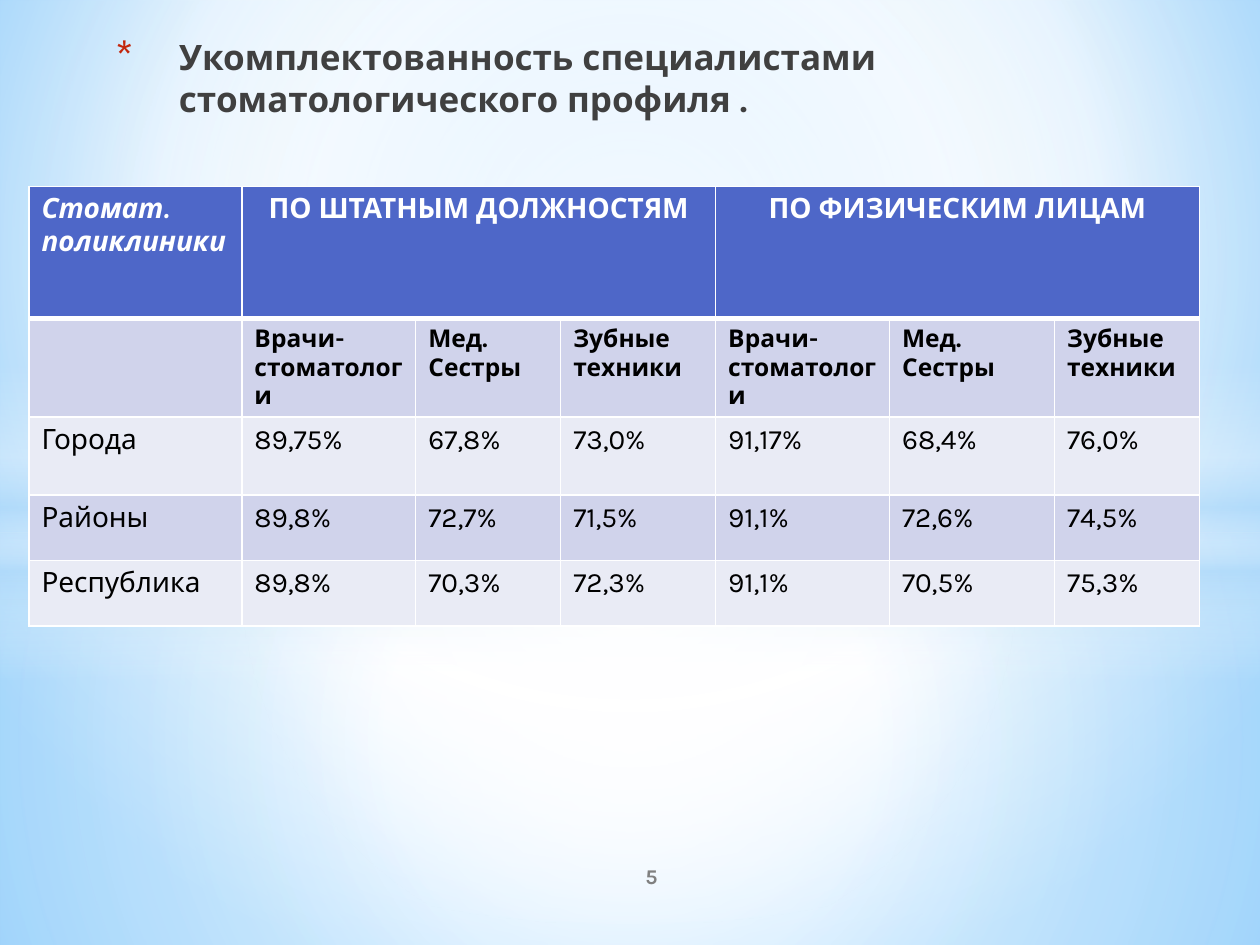
from lxml import etree
from pptx import Presentation
from pptx.dml.color import RGBColor
from pptx.enum import shapes, text
from pptx.oxml import ns
from pptx.util import Inches, Pt

FONT = "Karla"
WHITE = RGBColor(0xFF, 0xFF, 0xFF)
BLACK = RGBColor(0, 0, 0)
PALE_BLUE = RGBColor(0xB4, 0xDC, 0xFA)
SKY_BLUE = RGBColor(0x9E, 0xD5, 0xFF)
DEEP_BLUE = RGBColor(0x5B, 0xB9, 0xFF)
HEADER_BLUE = RGBColor(0x4E, 0x67, 0xC8)
BAND_DARK = RGBColor(0xD0, 0xD3, 0xEB)
BAND_LIGHT = RGBColor(0xE9, 0xEB, 0xF5)
TITLE_GRAY = RGBColor(0x40, 0x40, 0x40)
NUMBER_GRAY = RGBColor(0x80, 0x80, 0x80)
BULLET_RED = RGBColor(0xC3, 0x26, 0x0C)

CENTER = (50, 50, 50, 50)
# Left, top, width, height; preset; stops (position, colour, opacity); focus
GLOWS = [
    ((0, 4.23, 10, 3.27), "RECTANGLE",
     [(0, WHITE, 91), (37, WHITE, 76), (100, PALE_BLUE, 79)], CENTER),
    ((0, 0, 10, 4.23), "RECTANGLE",
     [(0, WHITE, 89), (48, WHITE, 62), (100, PALE_BLUE, 79)], CENTER),
    ((0, 2.9, 10, 2.5), "RECTANGLE",
     [(0, WHITE, 0), (29, WHITE, 30), (45, PALE_BLUE, 40),
      (55, WHITE, 26), (65, PALE_BLUE, 60), (100, WHITE, 0)], None),
    ((0, 1.75, 10, 5.58), "OVAL", [(0, WHITE, 100), (54, WHITE, 0)], CENTER),
]

COLUMN_WIDTHS = [1.69, 1.38, 1.15, 1.23, 1.38, 1.31, 1.15]
ROW_HEIGHTS = [1.05, 0.65, 0.62, 0.52, 0.52]
STAFF = ["Врачи-стоматологи", "Мед. Сестры", "Зубные техники"]
ROWS = [
    ["Стомат. поликлиники", "ПО ШТАТНЫМ ДОЛЖНОСТЯМ", "", "",
     "ПО ФИЗИЧЕСКИМ ЛИЦАМ", "", ""],
    [""] + STAFF * 2,
    ["Города", "89,75%", "67,8%", "73,0%", "91,17%", "68,4%", "76,0%"],
    ["Районы", "89,8%", "72,7%", "71,5%", "91,1%", "72,6%", "74,5%"],
    ["Республика", "89,8%", "70,3%", "72,3%", "91,1%", "70,5%", "75,3%"],
]


def add_element(parent, tag, **attributes):
    values = {name: str(value) for name, value in attributes.items()}
    return etree.SubElement(parent, ns.qn(tag), values)


def set_gradient(properties, stops, focus):
    """Swap the solid fill for a radial gradient, or a vertical one without focus."""
    solid = properties.find(ns.qn("a:solidFill"))
    gradient = etree.Element(ns.qn("a:gradFill"), rotWithShape="1")
    stop_list = add_element(gradient, "a:gsLst")
    for position, color, opacity in stops:
        stop = add_element(stop_list, "a:gs", pos=position * 1000)
        shade = add_element(stop, "a:srgbClr", val=color)
        if opacity < 100:
            add_element(shade, "a:alpha", val=opacity * 1000)
    if focus:
        circle = add_element(gradient, "a:path", path="circle")
        sides = {side: edge * 1000 for side, edge in zip("ltrb", focus)}
        add_element(circle, "a:fillToRect", **sides)
    else:
        add_element(gradient, "a:lin", ang=90 * 60000, scaled=0)
    properties.replace(solid, gradient)


def format_text(paragraph, size, color, bold=False, italic=False):
    for run in paragraph.runs:
        font = run.font
        font.name, font.size = FONT, Pt(size)
        font.bold, font.italic = bold, italic
        font.color.rgb = color


def add_background(slide):
    slide.background.fill.solid()
    properties = slide.element.find(".//" + ns.qn("p:bgPr"))
    stops = [(0, SKY_BLUE, 100), (60, WHITE, 100), (100, DEEP_BLUE, 100)]
    set_gradient(properties, stops, (20, 10, 20, 60))


def add_glow(slide, box, preset, stops, focus):
    shape = slide.shapes.add_shape(
        getattr(shapes.MSO_SHAPE, preset), *map(Inches, box))
    shape.shadow.inherit = False
    shape.line.fill.background()
    shape.fill.solid()
    set_gradient(shape.element.spPr, stops, focus)


def add_title(slide):
    title = slide.shapes.title
    title.left, title.top = Inches(0.62), Inches(0.23)
    title.width, title.height = Inches(8.5), Inches(0.94)
    frame = title.text_frame
    frame.text = "Укомплектованность специалистами стоматологического профиля ."
    frame.word_wrap = True
    frame.auto_size = text.MSO_AUTO_SIZE.NONE
    frame.vertical_anchor = text.MSO_ANCHOR.TOP
    paragraph = frame.paragraphs[0]
    paragraph.alignment = text.PP_ALIGN.LEFT
    format_text(paragraph, 20, TITLE_GRAY, bold=True)
    # Hanging asterisk bullet
    properties = paragraph._p.get_or_add_pPr()
    properties.set("marL", str(Inches(0.7)))
    properties.set("indent", str(Inches(-0.5)))
    add_element(add_element(properties, "a:buClr"), "a:srgbClr", val=BULLET_RED)
    add_element(properties, "a:buSzPct", val=128000)
    add_element(properties, "a:buFont", typeface=FONT)
    add_element(properties, "a:buChar", char="*")
    # Bring the title in front of the background glows
    slide.shapes.element.append(title.element)


def add_page_number(slide):
    box = slide.shapes.add_textbox(
        Inches(4.17), Inches(6.75), Inches(2), Inches(0.4))
    frame = box.text_frame
    frame.text = "5"
    frame.word_wrap = True
    frame.vertical_anchor = text.MSO_ANCHOR.MIDDLE
    frame.paragraphs[0].alignment = text.PP_ALIGN.CENTER
    format_text(frame.paragraphs[0], 12, NUMBER_GRAY, bold=True)


def set_borders(cell, top, bottom):
    properties = cell._tc.get_or_add_tcPr()
    for side, width in (("L", 1), ("R", 1), ("T", top), ("B", bottom)):
        line = add_element(properties, "a:ln" + side, w=Pt(width))
        add_element(add_element(line, "a:solidFill"), "a:srgbClr", val=WHITE)


def format_cell(cell, row, column):
    set_borders(cell, top=3 if row == 1 else 1, bottom=3 if row == 0 else 1)
    cell.fill.solid()
    cell.fill.fore_color.rgb = (
        HEADER_BLUE if row == 0 else BAND_DARK if row % 2 else BAND_LIGHT)
    paragraph = cell.text_frame.paragraphs[0]
    if row == 0 and column > 0:
        paragraph.alignment = text.PP_ALIGN.CENTER
    format_text(paragraph, 14 if row == 1 else 16, WHITE if row == 0 else BLACK,
                bold=row < 2, italic=row == column == 0)


def add_staffing_table(slide):
    table = slide.shapes.add_table(
        len(ROWS), len(COLUMN_WIDTHS), Inches(0.23), Inches(1.48),
        Inches(sum(COLUMN_WIDTHS)), Inches(sum(ROW_HEIGHTS))).table
    for column, width in zip(table.columns, COLUMN_WIDTHS):
        column.width = Inches(width)
    for row, height in zip(table.rows, ROW_HEIGHTS):
        row.height = Inches(height)
    for row, values in enumerate(ROWS):
        for column, value in enumerate(values):
            cell = table.cell(row, column)
            cell.text = value
            format_cell(cell, row, column)
    # Each group heading spans its three staff columns
    for first in (1, 4):
        table.cell(0, first).merge(table.cell(0, first + 2))


def main():
    presentation = Presentation()
    presentation.slide_width, presentation.slide_height = Inches(10), Inches(7.5)
    slide = presentation.slides.add_slide(presentation.slide_layouts[5])
    add_background(slide)
    for glow in GLOWS:
        add_glow(slide, *glow)
    add_page_number(slide)
    add_title(slide)
    add_staffing_table(slide)
    presentation.save("out.pptx")


if __name__ == "__main__":
    main()
